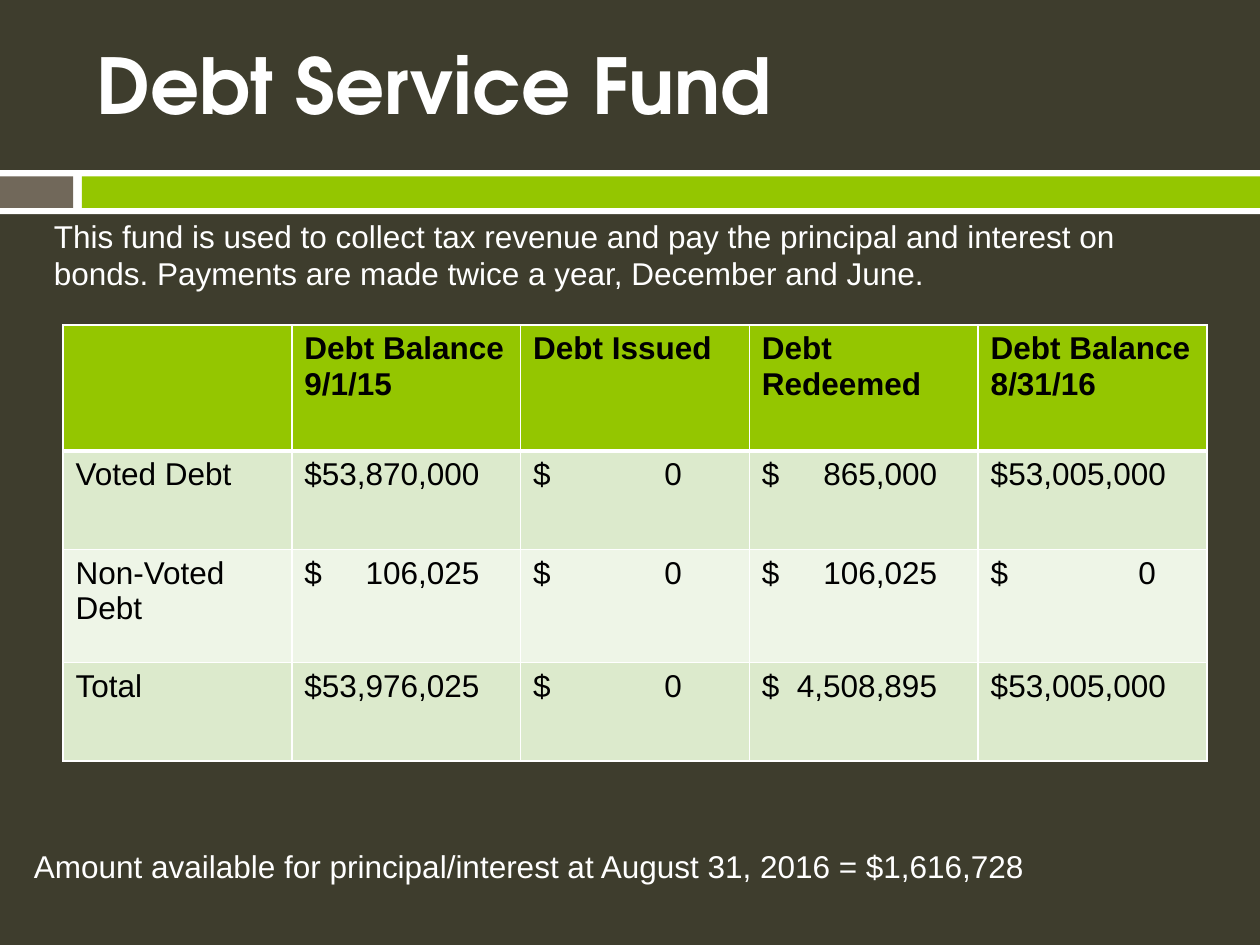
from pptx import Presentation
from pptx.dml.color import RGBColor
from pptx.enum.shapes import MSO_SHAPE as Shape
from pptx.enum.text import MSO_ANCHOR as Anchor
from pptx.oxml.ns import qn
from pptx.util import Inches, Pt
from lxml.etree import SubElement

COLORS = {
    "background": "3E3D2D", "white": "FFFFFF", "black": "000000",
    "taupe": "71685A", "green": "94C600", "band": "DCEACC", "pale": "EEF5E7",
}
BODY_FONT, TITLE_FONT = "Arial", "TeX Gyre Adventor"
WIDTH, HEIGHT = 10, 7.5

INTRO = ("This fund is used to collect tax revenue and pay the principal and interest "
         "on bonds. Payments are made twice a year, December and June.")
FOOTNOTE = "Amount available for principal/interest at August 31, 2016 = $1,616,728"
DEBT_ROWS = [
    ["", "Debt Balance 9/1/15", "Debt Issued", "Debt Redeemed", "Debt Balance 8/31/16"],
    ["Voted Debt", "$53,870,000", "$\t0", "$\t865,000", "$53,005,000"],
    ["Non-Voted Debt", "$\t106,025", "$\t0", "$\t106,025", "$\t0"],
    ["Total", "$53,976,025", "$\t0", "$\t4,508,895", "$53,005,000"],
]
ROW_HEIGHTS = [1, 0.78, 0.9, 0.78]
AMOUNT_STOPS = [0, 1.39, 1.18, 1.39, 1.31]


def color(name):
    return RGBColor.from_string(COLORS[name])


def style(para, size=18, font=BODY_FONT, ink="white", bold=False):
    para.font.size, para.font.name, para.font.bold = Pt(size), font, bold
    para.font.color.rgb = color(ink)


def add_text(page, box, text, anchor=Anchor.TOP, **look):
    frame = page.shapes.add_textbox(*map(Inches, box)).text_frame
    frame.word_wrap, frame.vertical_anchor = True, anchor
    frame.text = text
    style(frame.paragraphs[0], **look)


def add_divider(page, box):
    """White strip across the page with a short taupe and a long green bar."""
    left, top, width, height = box
    bar_top, bar_height = top + height / 7, height * 5 / 7
    short, gap = 0.58, 0.07
    bars = [
        ("white", box),
        ("taupe", (left, bar_top, short, bar_height)),
        ("green", (left + short + gap, bar_top, width - short - gap, bar_height)),
    ]
    for name, bar_box in bars:
        bar = page.shapes.add_shape(Shape.RECTANGLE, *map(Inches, bar_box))
        bar.shadow.inherit = False
        bar.fill.solid()
        bar.fill.fore_color.rgb = color(name)
        bar.line.fill.background()


def set_borders(cell, **widths):
    """Draw white cell edges, given in points by side: L, R, T, B."""
    properties = cell._tc.get_or_add_tcPr()
    for side, width in widths.items():
        line = SubElement(properties, qn(f"a:ln{side}"), w=str(Pt(width)))
        fill = SubElement(line, qn("a:solidFill"))
        SubElement(fill, qn("a:srgbClr"), val=COLORS["white"])


def add_right_tab(para, position):
    tabs = SubElement(para._p.get_or_add_pPr(), qn("a:tabLst"))
    SubElement(tabs, qn("a:tab"), pos=str(Inches(position)), algn="r")


def fill_cell(cell, text, row, stop):
    set_borders(cell, L=1, R=1, T=3 if row == 1 else 1, B=3 if row == 0 else 1)
    cell.fill.solid()
    cell.fill.fore_color.rgb = color("green" if row == 0 else "band" if row % 2 else "pale")
    para = cell.text_frame.paragraphs[0]
    para.text = text
    if "\t" in text:
        add_right_tab(para, stop)
    style(para, ink="black", bold=row == 0)


def add_debt_table(page, box):
    columns = len(AMOUNT_STOPS)
    table = page.shapes.add_table(len(DEBT_ROWS), columns, *map(Inches, box)).table
    for column in table.columns:
        column.width = Inches(box[2] / columns)
    for row, (texts, height) in enumerate(zip(DEBT_ROWS, ROW_HEIGHTS)):
        table.rows[row].height = Inches(height)
        for column, (text, stop) in enumerate(zip(texts, AMOUNT_STOPS)):
            fill_cell(table.cell(row, column), text, row, stop)


def build_debt_page(deck):
    page = deck.slides.add_slide(deck.slide_layouts[6])
    page.background.fill.solid()
    page.background.fill.fore_color.rgb = color("background")
    add_divider(page, (0, 1.35, WIDTH, 0.35))
    add_text(page, (0.67, 0, 8.67, 1.33), "Debt Service Fund", Anchor.MIDDLE,
             size=44, font=TITLE_FONT, bold=True)
    add_text(page, (0.33, 1.67, 9.33, 0.71), INTRO)
    add_text(page, (0.17, 6.67, 9.33, 0.4), FOOTNOTE)
    add_debt_table(page, (0.5, 2.58, 9.08, sum(ROW_HEIGHTS)))


def main():
    deck = Presentation()
    deck.slide_width, deck.slide_height = Inches(WIDTH), Inches(HEIGHT)
    build_debt_page(deck)
    deck.save("out.pptx")


if __name__ == "__main__":
    main()
